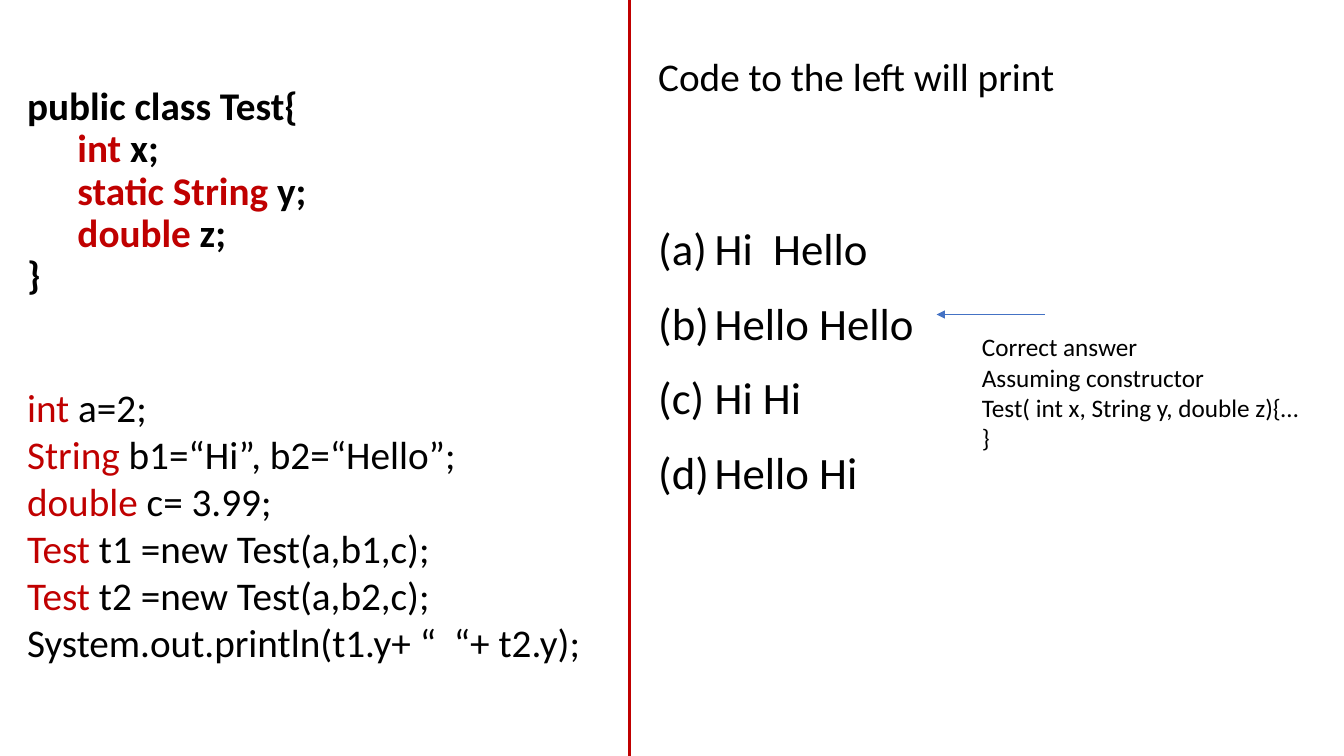
from dataclasses import dataclass

from lxml import etree
from pptx import Presentation
from pptx import util as u
from pptx.dml.color import RGBColor
from pptx.enum import shapes, text
from pptx.oxml.ns import qn


@dataclass(frozen=True)
class Theme:
    font: str = "Calibri"
    ink: str = "000000"
    accent: str = "C00000"
    arrow: str = "4472C4"
    code: int = 28
    option: int = 32
    note: int = 18


T = Theme()


def add_runs(p, line, size, bold):
    """Add the pieces of a line; a (text, colour) pair sets its own colour."""
    for piece in line:
        content, color = (piece, T.ink) if isinstance(piece, str) else piece
        r = p.add_run()
        r.text = content
        r.font.name, r.font.size, r.font.bold = T.font, u.Pt(size), bold
        r.font.color.rgb = RGBColor.from_string(color)


def add_text(s, box, lines, *, size=T.code, bold=False, wrap=True, soft=False,
             anchor=text.MSO_ANCHOR.TOP, spacing=None, before=0, numbered=False):
    """Write lines as paragraphs, or as one paragraph with soft breaks."""
    tf = s.shapes.add_textbox(*map(u.Inches, box)).text_frame
    tf.word_wrap, tf.vertical_anchor = wrap, anchor
    p = tf.paragraphs[0]
    for i, line in enumerate(lines):
        if i and soft:
            p.add_line_break()
        elif i:
            p = tf.add_paragraph()
        p.space_before = u.Pt(before)
        if spacing:
            p.line_spacing = spacing
        add_runs(p, line, size, bold)
        if numbered:
            add_letter(p)


def add_letter(p, indent=u.Inches(0.56)):
    """Number a paragraph (a), (b), (c) with a hanging indent."""
    pPr = p._p.get_or_add_pPr()
    pPr.set("marL", str(indent))
    pPr.set("indent", str(-indent))
    etree.SubElement(pPr, qn("a:buFont"), typeface="+mj-lt")
    etree.SubElement(pPr, qn("a:buAutoNum"), type="alphaLcParenBoth")


def add_line(s, start, end, color, width, arrow=False):
    c = s.shapes.add_connector(shapes.MSO_CONNECTOR.STRAIGHT,
                               *map(u.Inches, start + end))
    c.line.color.rgb = RGBColor.from_string(color)
    c.line.width = u.Pt(width)
    if arrow:
        etree.SubElement(c.line._get_or_add_ln(), qn("a:tailEnd"), type="triangle")
    etree.SubElement(c._element.spPr, qn("a:effectLst"))


def key(word):
    return word, T.accent


def main():
    prs = Presentation()
    prs.slide_width, prs.slide_height = u.Inches(13.33), u.Inches(7.5)
    s = prs.slides.add_slide(prs.slide_layouts[6])

    # Class definition
    fields = [("int", "x"), ("static String", "y"), ("double", "z")]
    class_lines = [["public class Test{"]]
    class_lines += [["\t", key(kind), f" {name};"] for kind, name in fields]
    class_lines.append(["}"])
    add_text(s, (0.17, 0.71, 5.79, 2.4), class_lines, bold=True, soft=True,
             anchor=text.MSO_ANCHOR.MIDDLE, spacing=0.9)

    # Answer options
    options = ["Hi  Hello", "Hello Hello", "Hi Hi", "Hello Hi"]
    add_text(s, (6.43, 2.07, 3.21, 3.94), [[o] for o in options],
             size=T.option, spacing=u.Pt(43.4), before=10, numbered=True)

    # Question and divider
    add_text(s, (6.43, 0.4, 5.68, 0.61), [["Code to the left will print"]],
             spacing=u.Pt(38.6))
    add_line(s, (6.24, 0), (6.24, 7.5), T.accent, 2)

    # Code that uses the class
    add_text(s, (0.17, 3.75, 5.76, 3.4), [
        [key("int "), "a=2;"],
        [key("String "), "b1=“Hi”, b2=“Hello”;"],
        [key("double "), "c= 3.99;"],
        [key("Test "), "t1 =new Test(a,b1,c);"],
        [key("Test "), "t2 =new Test(a,b2,c);"],
        ["System.out.println(t1.y+ “  “+ t2.y);"],
    ], wrap=False)

    # Correct answer: arrow and note
    add_line(s, (10.36, 3.12), (9.29, 3.12), T.arrow, 0.5, arrow=True)
    note = ["Correct answer", "Assuming constructor",
            "Test( int x, String y, double z){…", "}"]
    add_text(s, (9.64, 3.24, 3.38, 1.31), [[n] for n in note],
             size=T.note, wrap=False)

    prs.save("out.pptx")


if __name__ == "__main__":
    main()
